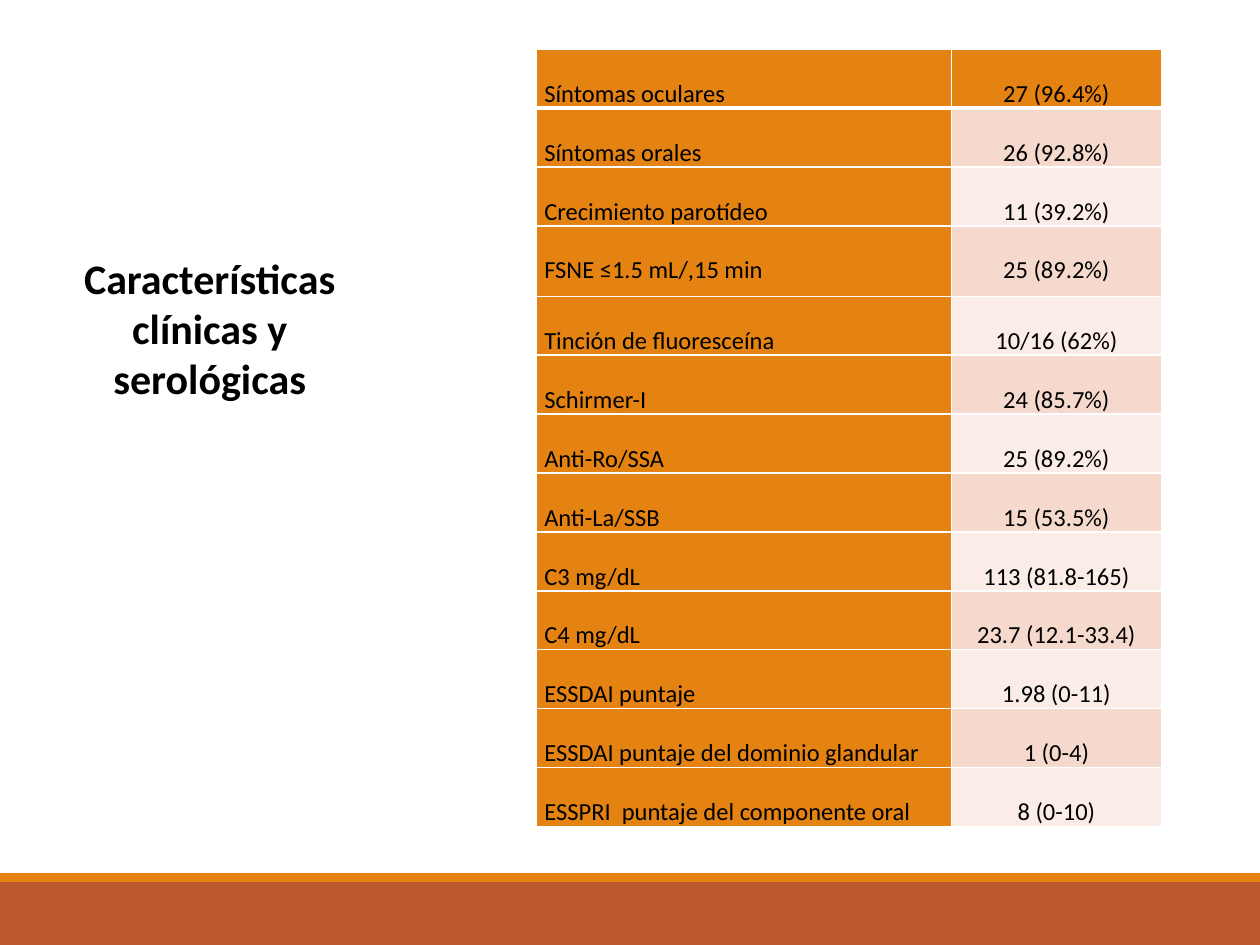
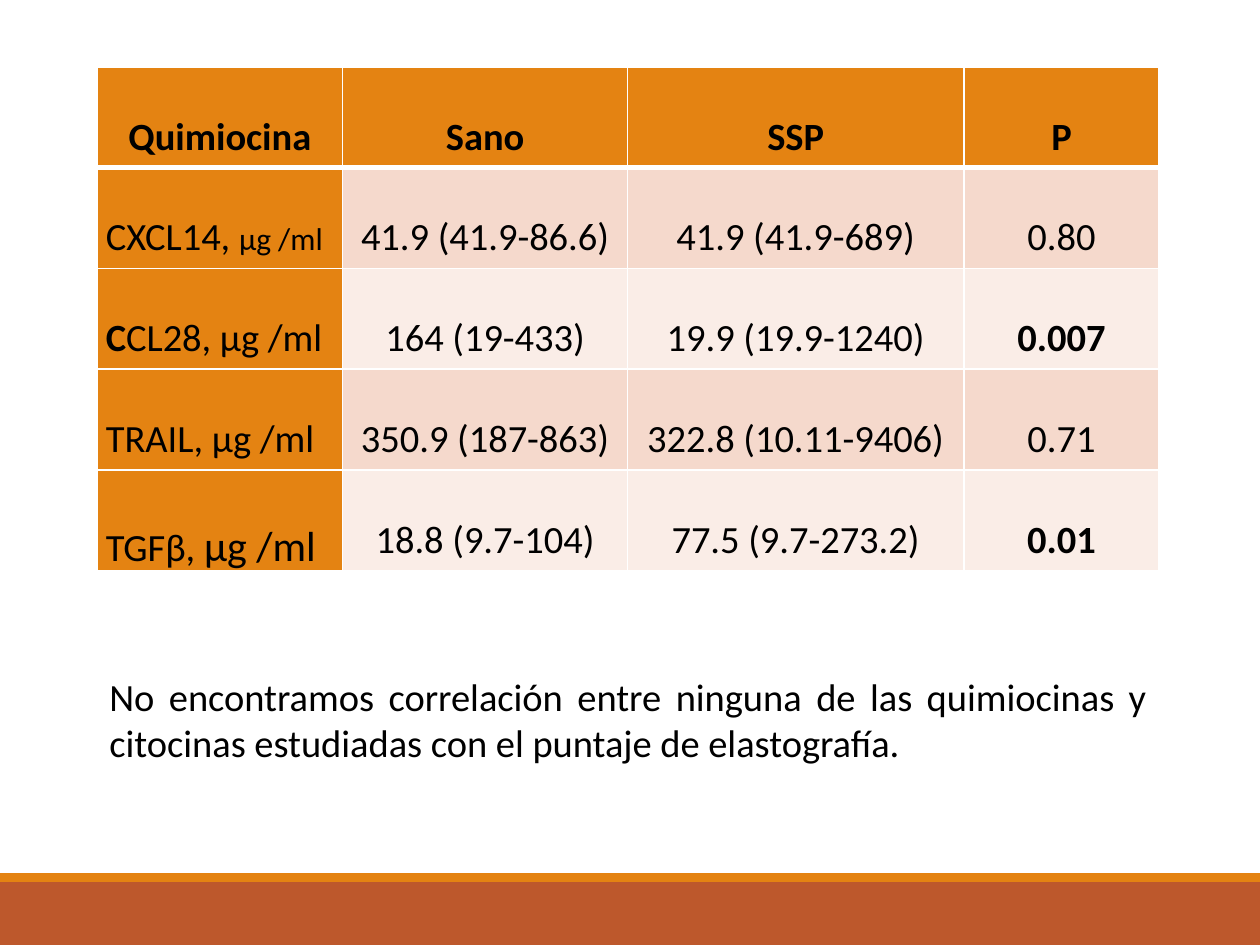
"""Build two slides of clinical and chemokine tables."""
from lxml import etree
from pptx import Presentation
from pptx import util as u
from pptx.dml.color import RGBColor
from pptx.enum import shapes, text
from pptx.oxml.ns import qn

INK = {"text": "000000", "line": "FFFFFF", "gold": "E48312",
       "rust": "BD582C", "dark": "F5D9CC", "light": "FAEDE7"}
ALIGN = text.PP_ALIGN

SIGNS = [
    ("Síntomas oculares", "27 (96.4%)"),
    ("Síntomas orales", "26 (92.8%)"),
    ("Crecimiento parotídeo", "11 (39.2%)"),
    ("FSNE ≤1.5 mL/,15 min", "25 (89.2%)"),
    ("Tinción de fluoresceína", "10/16 (62%)"),
    ("Schirmer-I", "24 (85.7%)"),
    ("Anti-Ro/SSA", "25 (89.2%)"),
    ("Anti-La/SSB", "15 (53.5%)"),
    ("C3 mg/dL", "113 (81.8-165)"),
    ("C4 mg/dL", "23.7 (12.1-33.4)"),
    ("ESSDAI puntaje", "1.98 (0-11)"),
    ("ESSDAI puntaje del dominio glandular", "1 (0-4)"),
    ("ESSPRI  puntaje del componente oral", "8 (0-10)"),
]
LEVELS = [
    [[(name, 22, True)] for name in ("Quimiocina", "Sano", "SSP", "P")],
    ([("CXCL14, ", 22, False), ("μg /ml", 18, False)],
     "41.9 (41.9-86.6)", "41.9 (41.9-689)", "0.80"),
    ([("C", 22, True), ("CL28, μg /ml", 22, False)],
     "164 (19-433)", "19.9 (19.9-1240)", [("0.007", 22, True)]),
    ("TRAIL, μg /ml", "350.9 (187-863)", "322.8 (10.11-9406)", "0.71"),
    ([("TGFβ, ", 22, False), ("μg /ml", 24, False)],
     "18.8 (9.7-104)", "77.5 (9.7-273.2)", [("0.01", 22, True)]),
]


def color(name):
    return RGBColor.from_string(INK[name])


class Deck:
    def __init__(self):
        self.file = Presentation()
        self.file.slide_width = u.Inches(10)
        self.file.slide_height = u.Inches(7.5)
        self.font = "Calibri"
        self.slide = None

    def page(self, layout):
        self.slide = self.file.slides.add_slide(self.file.slide_layouts[layout])
        self.band(7, 0.5, "rust")
        self.band(6.93, 0.07, "gold")

    def band(self, top, height, fill):
        bar = self.slide.shapes.add_shape(
            shapes.MSO_SHAPE.RECTANGLE, 0, u.Inches(top),
            u.Inches(10), u.Inches(height))
        bar.shadow.inherit = False
        bar.fill.solid()
        bar.fill.fore_color.rgb = color(fill)
        bar.line.fill.background()

    def label(self, para, runs, align):
        para.alignment = align
        for words, size, bold in runs:
            run = para.add_run()
            run.text = words
            run.font.name = self.font
            run.font.size = u.Pt(size)
            run.font.bold = bold
            run.font.color.rgb = color("text")

    def fit(self, box, at, runs, align):
        box.left, box.top, box.width, box.height = map(u.Inches, at)
        frame = box.text_frame
        frame.word_wrap = True
        frame.auto_size = text.MSO_AUTO_SIZE.SHAPE_TO_FIT_TEXT
        frame.vertical_anchor = text.MSO_ANCHOR.TOP
        self.label(frame.paragraphs[0], runs, align)
        return frame.paragraphs[0]

    def title(self, at, words):
        self.fit(self.slide.shapes.title, at, [(words, 24, True)], ALIGN.CENTER)

    def note(self, at, words):
        box = self.slide.shapes.add_textbox(0, 0, 0, 0)
        para = self.fit(box, at, [(words, 22, False)], ALIGN.JUSTIFY)
        para.space_after = u.Pt(10)

    def edge(self, cell, row):
        props = cell._tc.get_or_add_tcPr()
        wide = {"lnB": row == 0, "lnT": row == 1}
        for side in ("lnL", "lnR", "lnT", "lnB"):
            width = u.Pt(3 if wide.get(side) else 1)
            line = etree.SubElement(props, qn("a:" + side), w=str(int(width)))
            fill = etree.SubElement(line, qn("a:solidFill"))
            etree.SubElement(fill, qn("a:srgbClr"), val=INK["line"])

    def table(self, left, top, cols, rows, data, size, inset, first):
        grid = self.slide.shapes.add_table(
            len(rows), len(cols), u.Inches(left), u.Inches(top),
            u.Inches(sum(cols)), u.Inches(sum(rows))).table
        for col, width in zip(grid.columns, cols):
            col.width = u.Inches(width)
        for r, (height, items) in enumerate(zip(rows, data)):
            grid.rows[r].height = u.Inches(height)
            for c, item in enumerate(items):
                cell = grid.cell(r, c)
                cell.margin_left = cell.margin_right = u.Inches(inset)
                cell.margin_top = cell.margin_bottom = 0
                self.edge(cell, r)
                cell.fill.solid()
                tint = "dark" if r % 2 else "light"
                cell.fill.fore_color.rgb = color("gold" if r * c == 0 else tint)
                runs = [(item, size, False)] if isinstance(item, str) else item
                para = cell.text_frame.paragraphs[0]
                para.line_spacing = 2.0
                head = r == 0 and runs[0][2]
                self.label(para, runs, ALIGN.CENTER if c or head else first)


def main():
    deck = Deck()
    deck.page(5)
    heights = [0.56 if r == 3 else 0.44 for r in range(len(SIGNS))]
    deck.table(4.26, 0.39, [3.29, 1.67], heights, SIGNS, 14, 0.06, ALIGN.JUSTIFY)
    deck.title((0.16, 1.95, 3.01, 1.31), "Características clínicas y serológicas")

    deck.page(6)
    deck.table(0.77, 0.53, [1.95, 2.26, 2.67, 1.55], [0.8] * len(LEVELS),
               LEVELS, 22, 0.07, ALIGN.LEFT)
    deck.note((0.77, 5.29, 8.43, 0.84),
              "No encontramos correlación entre ninguna de las quimiocinas y "
              "citocinas estudiadas con el puntaje de elastografía.")
    deck.file.save("out.pptx")


if __name__ == "__main__":
    main()
